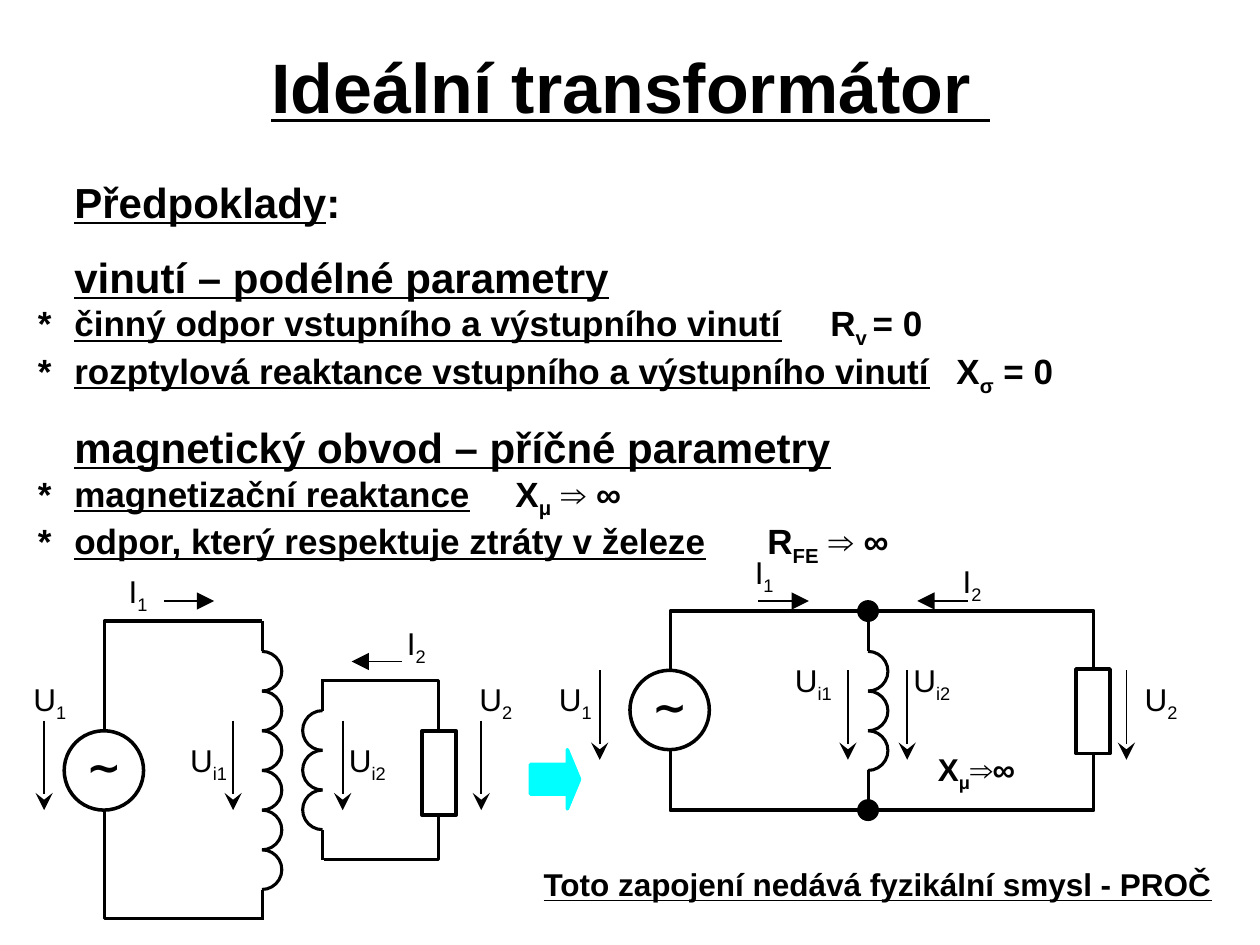
from lxml.etree import SubElement
from pptx import Presentation
from pptx.dml.color import RGBColor
from pptx.enum.shapes import MSO_CONNECTOR as Connector, MSO_SHAPE as Shape
from pptx.enum.text import MSO_ANCHOR as Anchor, MSO_AUTO_SIZE as AutoSize, PP_ALIGN as Align
from pptx.oxml.ns import qn
from pptx.util import Inches, Pt

BLACK = "000000"
CYAN = "00FFFF"
COIL_RADIUS = 0.1575
COIL_LEAD = 0.24
ARROW_LENGTH = 0.71
CURRENT_LENGTH = 0.4


def color(hex_string):
    return RGBColor.from_string(hex_string)


class CircuitSlide:
    font = "Arial"
    wire_width = 2
    coil_width = 1.75
    arrow_width = 1

    def __init__(self, presentation):
        self.slide = presentation.slides.add_slide(presentation.slide_layouts[1])
        self.shapes = self.slide.shapes

    def place(self, shape, left, top, width, height):
        shape.left, shape.top = Inches(left), Inches(top)
        shape.width, shape.height = Inches(width), Inches(height)

    def add_runs(self, paragraph, runs, size, bold=False):
        for text, style in runs:
            run = paragraph.add_run()
            run.text = text
            run.font.name = self.font
            run.font.size = Pt(size)
            run.font.bold = bold
            run.font.underline = "u" in style
            run.font.color.rgb = color(BLACK)
            if "s" in style:
                run._r.get_or_add_rPr().set("baseline", "-25000")

    def title(self, text, *box):
        shape = self.shapes.title
        self.place(shape, *box)
        text_frame = shape.text_frame
        text_frame.auto_size = AutoSize.NONE
        text_frame.vertical_anchor = Anchor.MIDDLE
        paragraph = text_frame.paragraphs[0]
        paragraph.alignment = Align.CENTER
        self.add_runs(paragraph, [(text, "u")], 40, True)

    def body(self, lines, *box):
        shape = self.slide.placeholders[1]
        self.place(shape, *box)
        text_frame = shape.text_frame
        text_frame.auto_size = AutoSize.NONE
        for index, (size, space_before, runs) in enumerate(lines):
            paragraph = text_frame.add_paragraph() if index else text_frame.paragraphs[0]
            paragraph.space_before = Pt(space_before)
            properties = paragraph._p.get_or_add_pPr()
            properties.set("marL", str(Inches(0.29)))
            properties.set("indent", str(Inches(-0.29)))
            SubElement(properties, qn("a:buNone"))
            self.add_runs(paragraph, runs, size, True)

    def text(self, runs, left, top, width, height, size=18, bold=False, margin=0, anchor=Anchor.TOP):
        shape = self.shapes.add_textbox(Inches(left), Inches(top), Inches(width), Inches(height))
        text_frame = shape.text_frame
        text_frame.word_wrap = True
        text_frame.vertical_anchor = anchor
        text_frame.margin_left = text_frame.margin_right = Inches(margin)
        text_frame.margin_top = text_frame.margin_bottom = Inches(margin / 2)
        paragraph = text_frame.paragraphs[0]
        paragraph.alignment = Align.CENTER
        self.add_runs(paragraph, runs, size, bold)

    def label(self, symbol, index, left, top):
        self.text([(symbol, ""), (index, "s")], left, top, 0.39, 0.3)

    def outline(self, shape, width, line=BLACK, fill=None):
        shape.shadow.inherit = False
        shape.line.color.rgb = color(line)
        shape.line.width = Pt(width)
        if fill:
            shape.fill.solid()
            shape.fill.fore_color.rgb = color(fill)
        else:
            shape.fill.background()

    def shape(self, kind, left, top, width, height, line_width=2, line=BLACK, fill=None, adjustments=()):
        shape = self.shapes.add_shape(kind, Inches(left), Inches(top), Inches(width), Inches(height))
        for index, value in enumerate(adjustments):
            shape.adjustments[index] = value
        self.outline(shape, line_width, line, fill)

    def line(self, start, end, width, head=None):
        points = [Inches(value) for value in (*start, *end)]
        connector = self.shapes.add_connector(Connector.STRAIGHT, *points)
        connector.line.color.rgb = color(BLACK)
        connector.line.width = Pt(width)
        if head:
            SubElement(connector.line._get_or_add_ln(), qn("a:tailEnd"), type=head, w="lg", len="lg")
        SubElement(connector._element.spPr, qn("a:effectLst"))

    def voltage(self, x, top):
        self.line((x, top), (x, top + ARROW_LENGTH), self.arrow_width, "stealth")

    def current(self, x, y, direction):
        self.line((x, y), (x + direction * CURRENT_LENGTH, y), self.arrow_width, "triangle")

    def wire(self, *points):
        corners = [(Inches(x), Inches(y)) for x, y in points]
        builder = self.shapes.build_freeform(*corners[0])
        builder.add_line_segments(corners[1:], close=False)
        self.outline(builder.convert_to_shape(), self.wire_width)

    def coil(self, x, top, turns, angles):
        diameter = 2 * COIL_RADIUS
        for turn in range(turns):
            self.shape(Shape.ARC, x - COIL_RADIUS, top + turn * diameter, diameter, diameter,
                       self.coil_width, adjustments=angles)
        bottom = top + turns * diameter
        self.line((x, top), (x, top - COIL_LEAD), self.coil_width)
        self.line((x, bottom + COIL_LEAD), (x, bottom), self.coil_width)

    def source(self, left, top):
        self.shape(Shape.OVAL, left, top, 0.63, 0.63)
        self.text([("∼", "")], left + 0.08, top + 0.08, 0.47, 0.4, 24, True, anchor=Anchor.MIDDLE)

    def load(self, left, top):
        self.shape(Shape.RECTANGLE, left, top, 0.27, 0.67)

    def node(self, left, top):
        self.shape(Shape.OVAL, left, top, 0.16, 0.16, 1, fill=BLACK)


def main():
    presentation = Presentation()
    presentation.slide_width, presentation.slide_height = Inches(10), Inches(7.5)
    circuit = CircuitSlide(presentation)
    bulge_right, bulge_left = (162, 54), (54, 162)

    circuit.title("Ideální transformátor ", 0.2, 0.28, 9.61, 0.79)
    circuit.body([
        (24, 0, [("\t", ""), ("Předpoklady", "u"), (":", "")]),
        (24, 14, [("\t", ""), ("vinutí – podélné parametry", "u")]),
        (20, 0, [("*\t", ""), ("činný odpor vstupního a výstupního vinutí", "u"),
                 ("\tR", ""), ("v ", "s"), ("= 0", "")]),
        (20, 0, [("*\t", ""), ("rozptylová reaktance vstupního a výstupního vinutí", "u"),
                 ("\tX", ""), ("σ", "s"), (" = 0", "")]),
        (24, 14, [("\t", ""), ("magnetický obvod – příčné parametry", "u")]),
        (20, 0, [("*\t", ""), ("magnetizační reaktance", "u"),
                 ("\tX", ""), ("μ", "s"), (" ⇒ ∞", "")]),
        (20, 0, [("*\t", ""), ("odpor, který respektuje ztráty v železe", "u"),
                 (" \tR", ""), ("FE", "s"), (" ⇒ ∞", "")]),
    ], 0.2, 1.35, 9.61, 3.03)

    circuit.coil(2.08, 5.17, 6, bulge_right)
    circuit.coil(2.56, 5.64, 3, bulge_left)
    circuit.coil(6.89, 5.17, 3, bulge_right)

    for wire in [
        [(2.08, 4.93), (0.83, 4.93), (0.83, 5.8)],
        [(0.83, 6.43), (0.83, 7.29), (2.09, 7.29)],
        [(2.55, 5.4), (3.48, 5.4), (3.48, 5.8)],
        [(2.57, 6.82), (3.48, 6.82), (3.48, 6.47)],
        [(5.32, 5.32), (5.32, 4.85), (6.81, 4.85)],
        [(5.32, 5.95), (5.32, 6.43), (6.81, 6.43)],
        [(6.97, 4.85), (8.68, 4.85), (8.68, 5.31)],
        [(8.68, 5.99), (8.68, 6.43), (6.97, 6.43)],
    ]:
        circuit.wire(*wire)

    circuit.source(0.51, 5.8)
    circuit.source(5, 5.32)
    circuit.load(3.35, 5.8)
    circuit.load(8.54, 5.31)
    circuit.node(6.81, 4.77)
    circuit.node(6.81, 6.35)

    for x, y, direction in [(1.3, 4.77, 1), (3.19, 5.25, -1), (6.02, 4.77, 1), (7.68, 4.77, -1)]:
        circuit.current(x, y, direction)
    for top, positions in [(5.72, (0.35, 1.85, 2.72, 3.82)), (5.32, (4.76, 6.73, 7.2, 8.94))]:
        for x in positions:
            circuit.voltage(x, top)

    for symbol, index, left, top in [
        ("I", "1", 0.9, 4.54), ("I", "2", 3.11, 4.95),
        ("U", "1", 0.2, 5.4), ("U", "2", 3.74, 5.4),
        ("U", "i1", 1.46, 5.88), ("U", "i2", 2.72, 5.88),
        ("I", "1", 5.87, 4.39), ("I", "2", 7.52, 4.46),
        ("U", "1", 4.37, 5.4), ("U", "2", 9.02, 5.4),
        ("U", "i1", 6.26, 5.25), ("U", "i2", 7.2, 5.25),
    ]:
        circuit.label(symbol, index, left, top)

    circuit.text([("X", ""), ("μ", "s"), ("⇒∞", "")], 7.2, 5.95, 1.1, 0.3, bold=True)
    circuit.shape(Shape.RIGHT_ARROW, 4.21, 5.95, 0.39, 0.47, line=CYAN, fill=CYAN, adjustments=(0.5, 0.25))
    circuit.text([("Toto zapojení nedává fyzikální smysl - PROČ", "u")],
                 4.13, 6.82, 5.67, 0.4, bold=True, margin=0.1)
    presentation.save("out.pptx")


if __name__ == "__main__":
    main()
